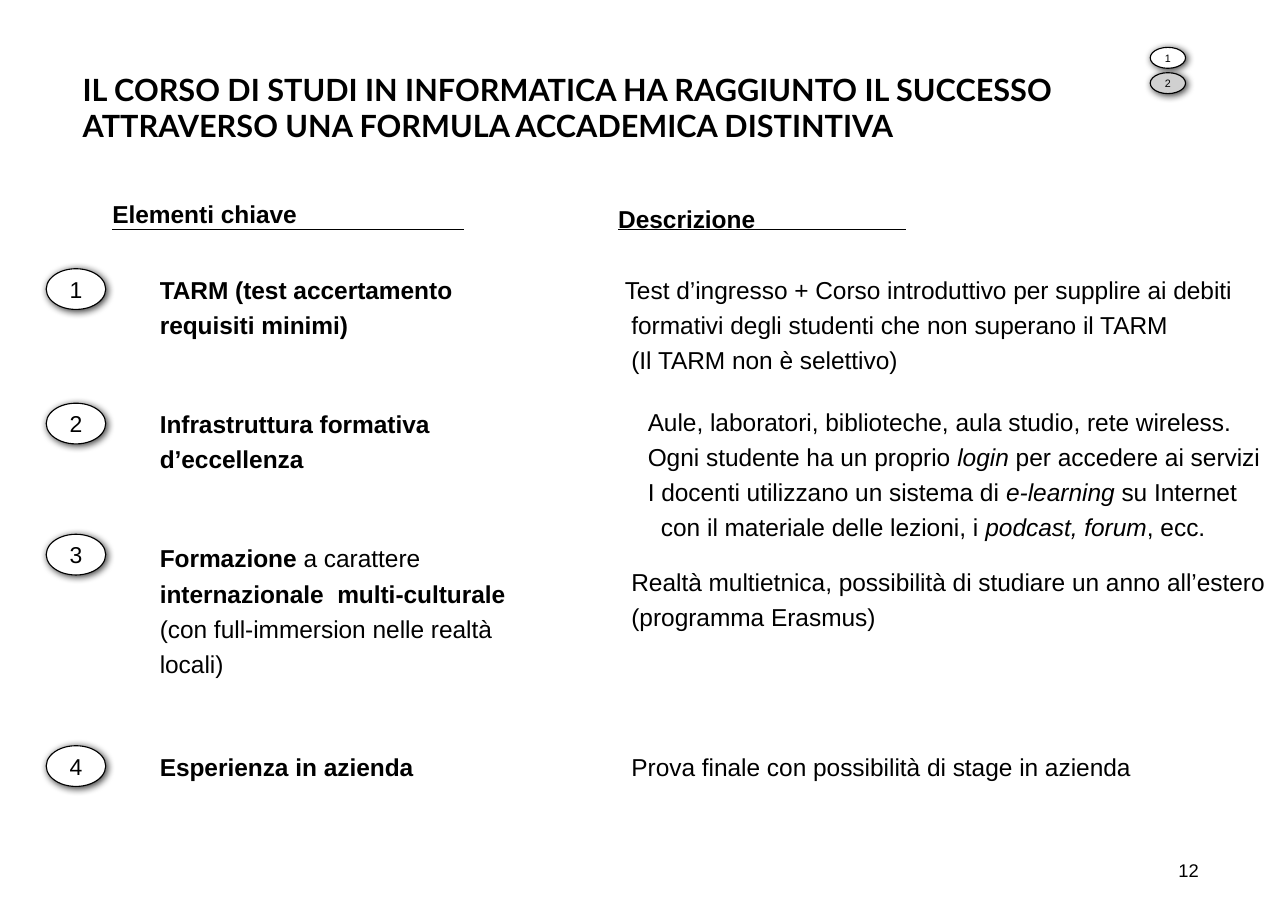
from dataclasses import dataclass

from lxml.etree import SubElement
from pptx import Presentation
from pptx.dml.color import RGBColor
from pptx.enum.shapes import MSO_CONNECTOR, MSO_SHAPE
from pptx.enum.text import MSO_ANCHOR, PP_ALIGN
from pptx.oxml.ns import qn
from pptx.util import Inches, Pt


@dataclass(frozen=True)
class Theme:
    ink: RGBColor = RGBColor(0, 0, 0)
    paper: RGBColor = RGBColor(255, 255, 255)
    current: RGBColor = RGBColor(0xD0, 0xD0, 0xD0)
    body_font: str = "Arial"
    title_font: str = "Lato"
    title: Pt = Pt(20)
    body: Pt = Pt(16)
    number: Pt = Pt(15)
    page: Pt = Pt(12)
    tracker: Pt = Pt(7)
    rule: Pt = Pt(0.75)


THEME = Theme()
WIDTH, HEIGHT = Inches(11.69), Inches(8.27)
COLUMN, ROW = WIDTH / 100, HEIGHT / 100
ELEMENT_LEFT, DESCRIPTION_LEFT, RIGHT_EDGE = 11.38, 48, 98.37
FIRST_ROW, ROW_STEP, LAST_ROW = 29.5, 14.76, 81.86
INDENT = Inches(0.12)
HALF_INDENT = Inches(0.06)
BOLD = {"bold": True}
ITALIC = {"italic": True}
PLAIN = {}

ELEMENTS = [
    (FIRST_ROW, 7.74, [[("TARM (test accertamento", BOLD)], [("requisiti minimi)", BOLD)]]),
    (FIRST_ROW + ROW_STEP, 7.74, [[("Infrastruttura formativa", BOLD)], [("d’eccellenza", BOLD)]]),
    (FIRST_ROW + 2 * ROW_STEP, 15.48, [
        [("Formazione", BOLD), (" a carattere", PLAIN)],
        [("internazionale  multi-culturale", BOLD)],
        [("(con full-immersion nelle realtà", PLAIN)],
        [("locali)", PLAIN)],
    ]),
    (LAST_ROW, 3.87, [[("Esperienza in azienda", BOLD)]]),
]

DESCRIPTIONS = [
    (DESCRIPTION_LEFT, FIRST_ROW, 11.61, [(INDENT, -HALF_INDENT), (INDENT, 0)], [
        [("Test d’ingresso + Corso introduttivo per supplire ai debiti formativi "
          "degli studenti che non superano il TARM", PLAIN)],
        [("(Il TARM non è selettivo)", PLAIN)],
    ]),
    (48.5, 44.01, 15.48, [(Inches(0.33), -INDENT)] * 3, [
        [("Aule, laboratori, biblioteche, aula studio, rete wireless.", PLAIN)],
        [("Ogni studente ha un proprio ", PLAIN), ("login", ITALIC),
         (" per accedere ai servizi", PLAIN)],
        [("I docenti utilizzano un sistema di ", PLAIN), ("e-learning", ITALIC),
         (" su Internet con il materiale delle lezioni, i ", PLAIN),
         ("podcast, forum", ITALIC), (", ecc.", PLAIN)],
    ]),
    (DESCRIPTION_LEFT, 61.55, 11.61, [(INDENT, 0)], [
        [("Realtà multietnica, possibilità di studiare un anno all’estero "
          "(programma Erasmus)", PLAIN)],
    ]),
    (DESCRIPTION_LEFT, LAST_ROW, 3.87, [(INDENT, 0)], [
        [("Prova finale con possibilità di stage in azienda", PLAIN)],
    ]),
]

HEADINGS = [
    ("Elementi chiave", 8.73, 21.16, 19.42, 36.01),
    ("Descrizione", DESCRIPTION_LEFT, 21.77, 31.05, 70.32),
]


def place(left, top, width, height):
    return [round(length) for length in
            (left * COLUMN, top * ROW, width * COLUMN, height * ROW)]


def apply(target, formats):
    for attribute, value in formats.items():
        setattr(target, attribute, value)


def write(frame, paragraphs, size, font=THEME.body_font, align=PP_ALIGN.LEFT,
          spacing=None, indents=None):
    apply(frame, {"word_wrap": True, "vertical_anchor": MSO_ANCHOR.TOP,
                  "margin_left": 0, "margin_right": 0,
                  "margin_top": 0, "margin_bottom": 0})
    for index, runs in enumerate(paragraphs):
        paragraph = frame.add_paragraph() if index else frame.paragraphs[0]
        apply(paragraph, {"alignment": align, "line_spacing": spacing})
        if indents:
            margin, first_line = indents[index]
            properties = paragraph._p.get_or_add_pPr()
            properties.set("marL", str(margin))
            properties.set("indent", str(first_line))
        for text, style in runs:
            run = paragraph.add_run()
            run.text = text
            apply(run.font, {"name": font, "size": size, **style})
            run.font.color.rgb = THEME.ink


def add_label(slide, text, box, size, style=PLAIN, **layout):
    label = slide.shapes.add_textbox(*place(*box))
    write(label.text_frame, [[(text, style)]], size, **layout)


def add_filled(slide, kind, box, color):
    shape = slide.shapes.add_shape(kind, *place(*box))
    shape.shadow.inherit = False
    shape.fill.solid()
    shape.fill.fore_color.rgb = color
    return shape


def add_cell(slide, box, paragraphs, indents):
    cell = add_filled(slide, MSO_SHAPE.RECTANGLE, box, THEME.paper)
    cell.line.fill.background()
    write(cell.text_frame, paragraphs, THEME.body, spacing=1.2, indents=indents)


def add_badge(slide, number, box, size, color=THEME.paper):
    badge = add_filled(slide, MSO_SHAPE.OVAL, box, color)
    badge.line.color.rgb = THEME.ink
    badge.line.width = THEME.rule
    effects = badge._element.spPr.find(qn("a:effectLst"))
    shadow = SubElement(effects, qn("a:outerShdw"), blurRad=str(Pt(5)),
                        dist=str(Pt(1.4)), dir="2700000", rotWithShape="0")
    shade = SubElement(shadow, qn("a:srgbClr"), val=str(THEME.ink))
    SubElement(shade, qn("a:alpha"), val="75000")
    write(badge.text_frame, [[(str(number), PLAIN)]], size, align=PP_ALIGN.CENTER)
    apply(badge.text_frame, {"word_wrap": False, "vertical_anchor": MSO_ANCHOR.MIDDLE})


def add_heading(slide, text, left, top, width, rule_end):
    add_label(slide, text, (left, top, width, 3.87), THEME.body, BOLD, spacing=1.2)
    start_x, rule_y, end_x, _ = place(left, 25.15, rule_end, 0)
    rule = slide.shapes.add_connector(MSO_CONNECTOR.STRAIGHT, start_x, rule_y, end_x, rule_y)
    rule.line.color.rgb = THEME.ink
    rule.line.width = THEME.rule
    SubElement(rule._element.spPr, qn("a:effectLst"))


def main():
    deck = Presentation()
    apply(deck, {"slide_width": WIDTH, "slide_height": HEIGHT})
    slide = deck.slides.add_slide(deck.slide_layouts[6])

    add_label(slide, "IL CORSO DI STUDI IN INFORMATICA HA RAGGIUNTO IL SUCCESSO "
              "ATTRAVERSO UNA FORMULA ACCADEMICA DISTINTIVA",
              (6.42, 7.74, 80.67, 8.1), THEME.title, BOLD, font=THEME.title_font)
    for heading in HEADINGS:
        add_heading(slide, *heading)
    for top, height, paragraphs in ELEMENTS:
        add_cell(slide, (ELEMENT_LEFT, top, 29.26, height), paragraphs,
                 [(INDENT, 0)] * len(paragraphs))
    for left, top, height, indents, paragraphs in DESCRIPTIONS:
        add_cell(slide, (left, top, RIGHT_EDGE - left, height), paragraphs, indents)
    for number, top in enumerate((FIRST_ROW, FIRST_ROW + ROW_STEP, 58.65, LAST_ROW), 1):
        add_badge(slide, number, (3.59, top, 4.62, 4.47), THEME.number)
    for number, color in enumerate((THEME.paper, THEME.current), 1):
        add_badge(slide, number, (89.31, 2.42 + 2.78 * number, 2.74, 2.3),
                  THEME.tracker, color)
    add_label(slide, "12", (73.48, 94.32, 19.59, 2.42), THEME.page, align=PP_ALIGN.RIGHT)

    deck.save("out.pptx")


if __name__ == "__main__":
    main()
